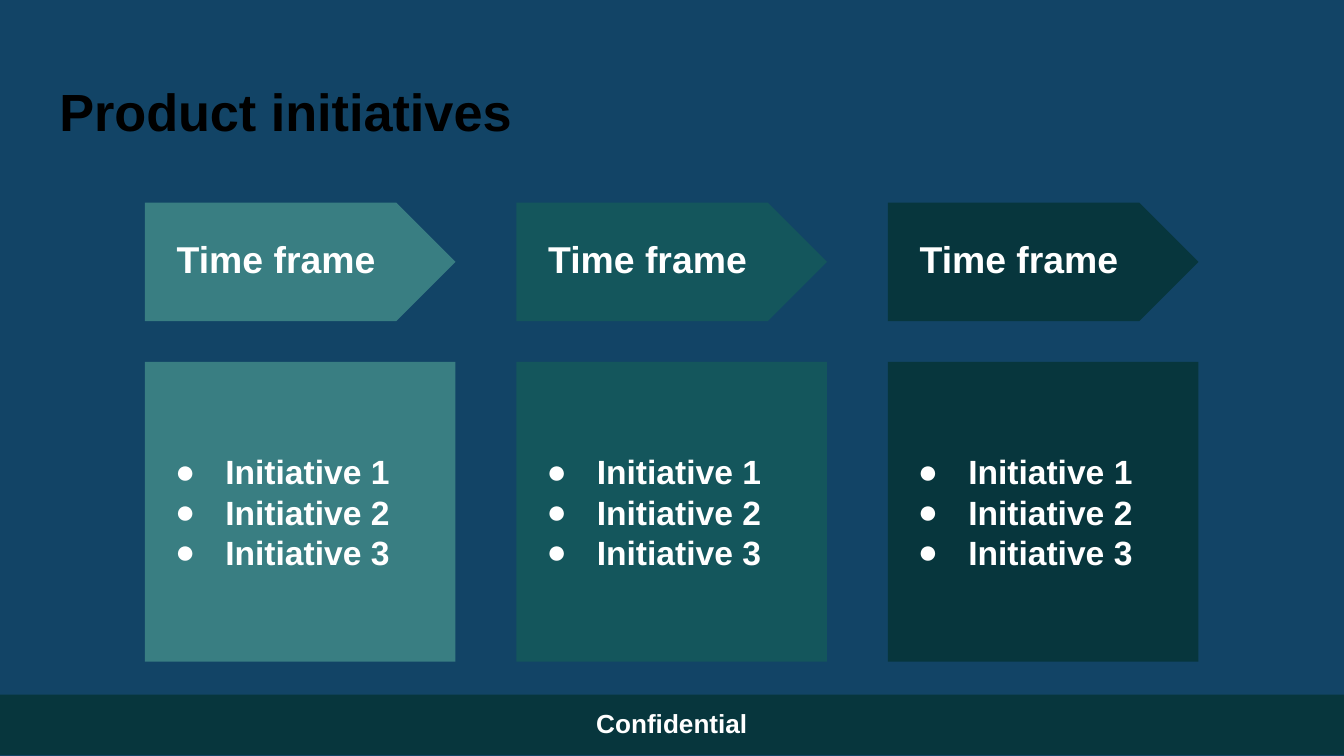
import pptx
import pptx.dml.color
import pptx.enum.shapes
import pptx.enum.text
import pptx.oxml.ns
import pptx.util
from lxml import etree

Cm = pptx.util.Cm
Pt = pptx.util.Pt
SHAPE = pptx.enum.shapes.MSO_SHAPE
ALIGN = pptx.enum.text.PP_ALIGN
ANCHOR = pptx.enum.text.MSO_ANCHOR

SLIDE_WIDTH, SLIDE_HEIGHT = 25.4, 14.29
COLUMN_LEFT, COLUMN_STEP, COLUMN_WIDTH = 2.74, 7.02, 5.87
FOOTER_TOP = 13.13
COLORS = {
    "background": "124466",
    "title": "000000",
    "text": "FFFFFF",
    "early": "397E82",
    "middle": "14565C",
    "late": "07363D",
}
STAGES = ["early", "middle", "late"]
INITIATIVES = ["Initiative 1", "Initiative 2", "Initiative 3"]


def rgb(name):
    return pptx.dml.color.RGBColor.from_string(COLORS[name])


class RoadmapSlide:
    font = "Arial"
    inset = Cm(0.25)

    def __init__(self, deck):
        self.slide = deck.slides.add_slide(deck.slide_layouts[5])
        fill = self.slide.background.fill
        fill.solid()
        fill.fore_color.rgb = rgb("background")

    def fill_text(self, frame, lines, size, color="text", align=ALIGN.LEFT,
                  anchor=ANCHOR.TOP, bulleted=False):
        frame.word_wrap = True
        frame.auto_size = pptx.enum.text.MSO_AUTO_SIZE.NONE
        frame.vertical_anchor = anchor
        frame.margin_left = frame.margin_right = self.inset
        frame.margin_top = frame.margin_bottom = self.inset
        for index, line in enumerate(lines):
            paragraph = frame.add_paragraph() if index else frame.paragraphs[0]
            paragraph.alignment = align
            run = paragraph.add_run()
            run.text = line
            run.font.name = self.font
            run.font.size = Pt(size)
            run.font.bold = True
            run.font.color.rgb = rgb(color)
            if bulleted:
                self.add_bullet(paragraph)

    def add_bullet(self, paragraph):
        qn = pptx.oxml.ns.qn
        properties = paragraph._p.get_or_add_pPr()
        properties.set("marL", str(Cm(1.27)))
        properties.set("indent", str(-Cm(0.95)))
        bullet_color = etree.SubElement(properties, qn("a:buClr"))
        etree.SubElement(bullet_color, qn("a:srgbClr"), val=COLORS["text"])
        etree.SubElement(properties, qn("a:buFont"), typeface=self.font)
        etree.SubElement(properties, qn("a:buChar"), char="●")

    def title(self, text, left, top, width, height):
        heading = self.slide.shapes.title
        heading.left, heading.top = Cm(left), Cm(top)
        heading.width, heading.height = Cm(width), Cm(height)
        self.fill_text(heading.text_frame, [text], 28, "title")

    def block(self, kind, color, left, top, width, height):
        """Add a filled shape without outline and return it."""
        block = self.slide.shapes.add_shape(
            kind, Cm(left), Cm(top), Cm(width), Cm(height))
        block.shadow.inherit = False
        block.fill.solid()
        block.fill.fore_color.rgb = rgb(color)
        block.line.fill.background()
        return block

    def label(self, text, left, top, width, height):
        label = self.slide.shapes.add_textbox(
            Cm(left), Cm(top), Cm(width), Cm(height))
        self.fill_text(label.text_frame, [text], 20)

    def stage(self, color, left):
        """Add one column: time frame arrow above its initiatives."""
        self.block(SHAPE.PENTAGON, color, left, 3.83, COLUMN_WIDTH, 2.24)
        self.label("Time frame", left + 0.35, 4.22, 4.83, 1.22)
        initiatives = self.block(
            SHAPE.RECTANGLE, color, left, 6.84, COLUMN_WIDTH, 5.67)
        self.fill_text(initiatives.text_frame, INITIATIVES, 18,
                       anchor=ANCHOR.MIDDLE, bulleted=True)

    def footer(self, text):
        footer = self.block(SHAPE.RECTANGLE, "late", 0, FOOTER_TOP,
                            SLIDE_WIDTH, 1.14)
        self.fill_text(footer.text_frame, [text], 14, align=ALIGN.CENTER)


def main():
    deck = pptx.Presentation()
    deck.slide_width, deck.slide_height = Cm(SLIDE_WIDTH), Cm(SLIDE_HEIGHT)
    roadmap = RoadmapSlide(deck)
    roadmap.title("Product initiatives", 0.87, 1.24, 23.67, 1.6)
    for column, color in enumerate(STAGES):
        roadmap.stage(color, COLUMN_LEFT + column * COLUMN_STEP)
    roadmap.footer("Confidential")
    deck.save("out.pptx")


if __name__ == "__main__":
    main()
